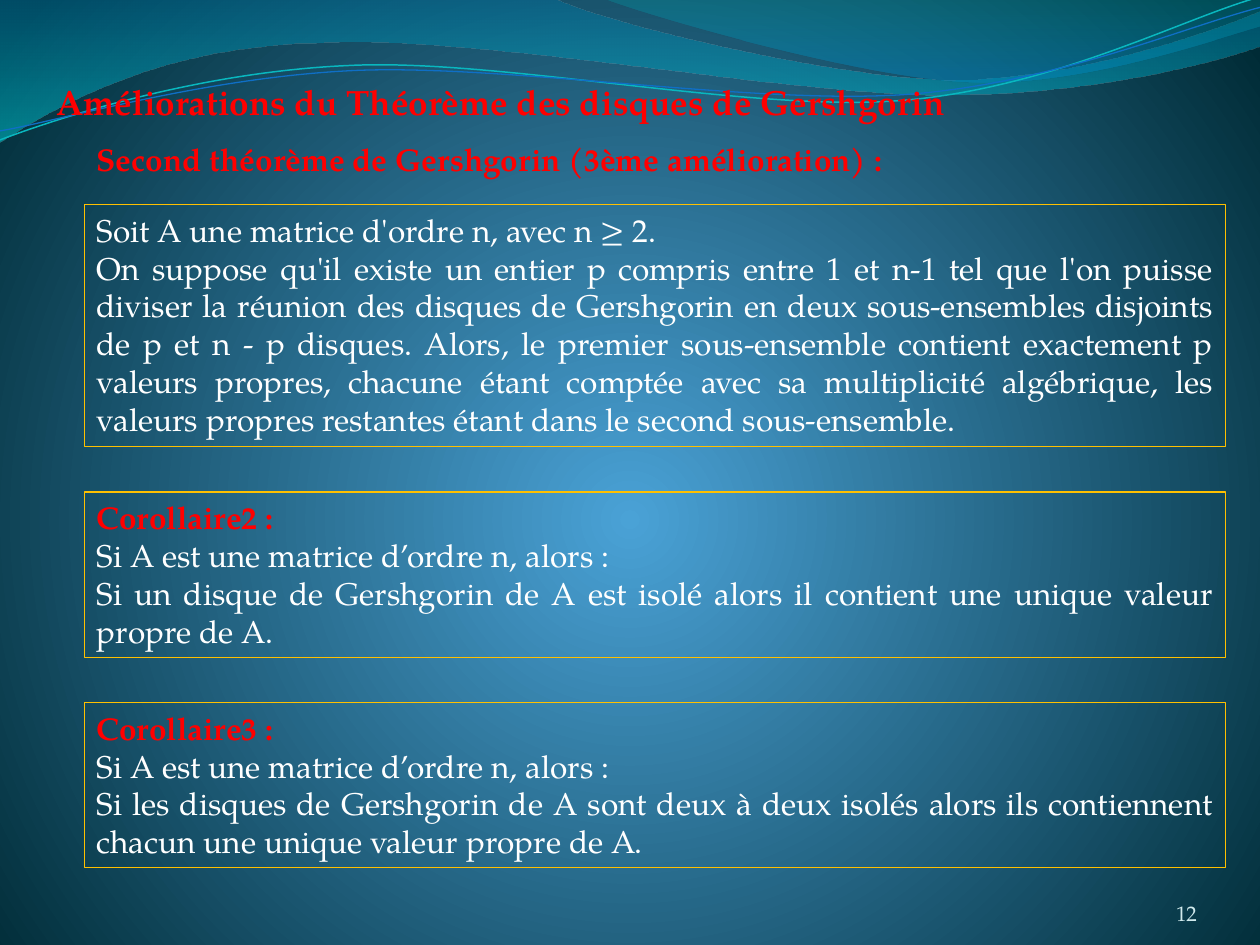
from math import cos, radians, sin

from lxml.etree import SubElement
from pptx import Presentation
from pptx.dml.color import RGBColor
from pptx.enum.shapes import MSO_SHAPE
from pptx.enum.text import MSO_ANCHOR, MSO_AUTO_SIZE, PP_ALIGN
from pptx.oxml.ns import qn
from pptx.util import Cm, Pt

COLORS = {
    "center": "4AA2D6", "edge": "002B36",
    "wave_blue": "0074A0", "wave_cyan": "00C4CD",
    "crest_blue": "008ABF", "crest_teal": "00A0A8",
    "line_cyan": "09B7BF", "line_blue": "0F6FC6",
    "heading": "FF0000", "body": "FFFFFF", "frame": "FFC000", "number": "D1EAED",
}
FONT = "TeX Gyre Pagella"
HEADING = {"size": Pt(18), "bold": True, "color": "heading"}
TITLE = {**HEADING, "size": Pt(20)}
BODY = {"size": Pt(18), "bold": False, "color": "body"}
NUMBER = {"size": Pt(12), "bold": False, "color": "number"}
INSETS = {"margin_left": Cm(0.25), "margin_right": Cm(0.25),
          "margin_top": Cm(0.13), "margin_bottom": Cm(0.13)}
FLOWING = {**INSETS, "word_wrap": True, "vertical_anchor": MSO_ANCHOR.TOP,
           "auto_size": MSO_AUTO_SIZE.SHAPE_TO_FIT_TEXT}
CORNERED = {**dict.fromkeys(INSETS, 0), "word_wrap": True,
            "vertical_anchor": MSO_ANCHOR.BOTTOM}
TILT = 2.7

WAVE = [(0, 0), (11.18, -0.03),
        (12.09, 0.43, 16.87, 1.6, 19.25, 1.6), (21.67, 1.6, 24.33, 0.66, 25.4, 0.23),
        (25.43, 0.91),
        (24.97, 1.12, 22.1, 1.93, 18.95, 1.91), (15.8, 1.91, 9.7, 0.71, 6.53, 0.86),
        (3.28, 0.89, 1.17, 2.11, -0.03, 2.87), (0, 0)]
CREST = [(12.17, -0.03),
         (12.93, 0.28, 17.32, 1.57, 19.53, 1.65), (21.77, 1.75, 24.41, 0.81, 25.4, 0.53),
         (25.4, 0), (12.17, -0.03)]
CYAN_LINE = [(0, 2.82),
             (1.22, 2.36, 4.01, 1.45, 7.04, 1.32), (10.03, 1.17, 15.06, 2.26, 18.11, 2.03),
             (21.16, 1.8, 23.83, 0.38, 25.35, -0.05)]
BLUE_LINE = [(0, 2.64),
             (1.19, 2.44, 4.17, 1.55, 7.19, 1.42), (10.24, 1.3, 15.16, 2.11, 18.21, 1.91),
             (21.23, 1.7, 23.9, 0.53, 25.4, 0.15)]

THEOREM = [
    ("Soit A une matrice d'ordre n, avec n ≥ 2.", BODY),
    ("On suppose qu'il existe un entier p compris entre 1 et n-1 tel que l'on puisse "
     "diviser la réunion des disques de Gershgorin en deux sous-ensembles disjoints "
     "de p et n - p disques. Alors, le premier sous-ensemble contient exactement p "
     "valeurs propres, chacune étant comptée avec sa multiplicité algébrique, les "
     "valeurs propres restantes étant dans le second sous-ensemble.", BODY),
]


def rgb(name):
    return RGBColor.from_string(COLORS[name])


def corollary(number, statement):
    return [(f"Corollaire{number} :", HEADING),
            ("Si A est une matrice d’ordre n, alors :", BODY),
            (statement, BODY)]


def set_values(target, values):
    for name, value in values.items():
        setattr(target, name, value)


def set_stops(fill, stops):
    fill.gradient()
    for stop, (position, color) in zip(fill.gradient_stops, stops):
        stop.position = position
        stop.color.rgb = rgb(color)


def paint_background(page):
    set_stops(page.background.fill, [(0, "center"), (1, "edge")])
    gradient = page.element.find(".//" + qn("a:gradFill"))
    gradient.remove(gradient.find(qn("a:lin")))
    radial = SubElement(gradient, qn("a:path"), path="circle")
    SubElement(radial, qn("a:fillToRect"), l="50000", t="55000", r="50000", b="45000")


def turn(segment, center, degrees):
    cosine, sine = cos(radians(degrees)), sin(radians(degrees))
    turned = []
    for x, y in zip(segment[::2], segment[1::2]):
        dx, dy = x - center[0], y - center[1]
        turned += [center[0] + dx * cosine - dy * sine, center[1] + dx * sine + dy * cosine]
    return turned


def add_outline(page, segments, close):
    points = [(Cm(x), Cm(y)) for segment in segments
              for x, y in zip(segment[::2], segment[1::2])]
    builder = page.shapes.build_freeform(*points[0])
    builder.add_line_segments(points[1:], close=close)
    shape = builder.convert_to_shape()
    shape.shadow.inherit = False
    steps = iter(list(shape.element.iter(qn("a:lnTo"))))
    for segment in segments[1:]:
        step = next(steps)
        if len(segment) == 6:
            step.tag = qn("a:cubicBezTo")
            for handle in (next(steps), next(steps)):
                step.append(handle[0])
                handle.getparent().remove(handle)
    return shape


def add_wave(page, segments, stops, angle):
    shape = add_outline(page, segments, True)
    shape.line.fill.background()
    set_stops(shape.fill, [stop[:2] for stop in stops])
    shape.fill.gradient_angle = angle
    colors = shape.element.spPr.iter(qn("a:srgbClr"))
    for color, (_, _, opacity) in zip(colors, stops):
        SubElement(color, qn("a:alpha"), val=str(opacity * 1000))


def add_curve(page, segments, center, color, width):
    level = [turn(segment, center, TILT) for segment in segments]
    shape = add_outline(page, level, False)
    shape.rotation = -TILT
    shape.fill.background()
    shape.line.color.rgb = rgb(color)
    shape.line.width = Pt(width)


def write(box, content, frame=FLOWING, alignment=PP_ALIGN.JUSTIFY):
    set_values(box.text_frame, frame)
    for index, (text, style) in enumerate(content):
        para = box.text_frame.add_paragraph() if index else box.text_frame.paragraphs[0]
        para.alignment = alignment
        span = para.add_run()
        span.text = text
        set_values(span.font, {"name": FONT, "size": style["size"], "bold": style["bold"]})
        span.font.color.rgb = rgb(style["color"])


def add_text(page, left, top, width, height, content, **options):
    box = page.shapes.add_textbox(Cm(left), Cm(top), Cm(width), Cm(height))
    write(box, content, **options)


def add_frame(page, top, height, content):
    box = page.shapes.add_shape(MSO_SHAPE.RECTANGLE, Cm(1.7), Cm(top), Cm(23.01), Cm(height))
    box.shadow.inherit = False
    box.fill.background()
    box.line.color.rgb = rgb("frame")
    box.line.width = Pt(0)
    write(box, content)


def main():
    deck = Presentation()
    deck.slide_width, deck.slide_height = Cm(25.4), Cm(19.05)
    page = deck.slides.add_slide(deck.slide_layouts[6])
    paint_background(page)
    add_wave(page, WAVE, [(0, "wave_blue", 45), (1, "wave_cyan", 55)], 270)
    add_wave(page, CREST, [(0.2, "crest_blue", 45), (1, "crest_teal", 30)], 90)
    add_curve(page, CYAN_LINE, (12.67, 1.46), "line_cyan", 0.85)
    add_curve(page, BLUE_LINE, (12.69, 1.5), "line_blue", 0.75)
    add_text(page, 22.02, 17.65, 2.11, 1.02, [("12", NUMBER)],
             frame=CORNERED, alignment=PP_ALIGN.RIGHT)
    add_text(page, 1.7, 2.69, 16.41, 1.02,
             [("Second théorème de Gershgorin (3ème amélioration) :", HEADING)])
    add_frame(page, 4.12, 4.88, THEOREM)
    add_frame(page, 9.92, 3.33, corollary(
        2, "Si un disque de Gershgorin de A est isolé alors il contient une unique "
           "valeur propre de A."))
    add_frame(page, 14.16, 3.33, corollary(
        3, "Si les disques de Gershgorin de A sont deux à deux isolés alors ils "
           "contiennent chacun une unique valeur propre de A."))
    add_text(page, 0.89, 1.49, 20.17, 1.12,
             [("Améliorations du Théorème des disques de Gershgorin", TITLE)])
    deck.save("out.pptx")


if __name__ == "__main__":
    main()
